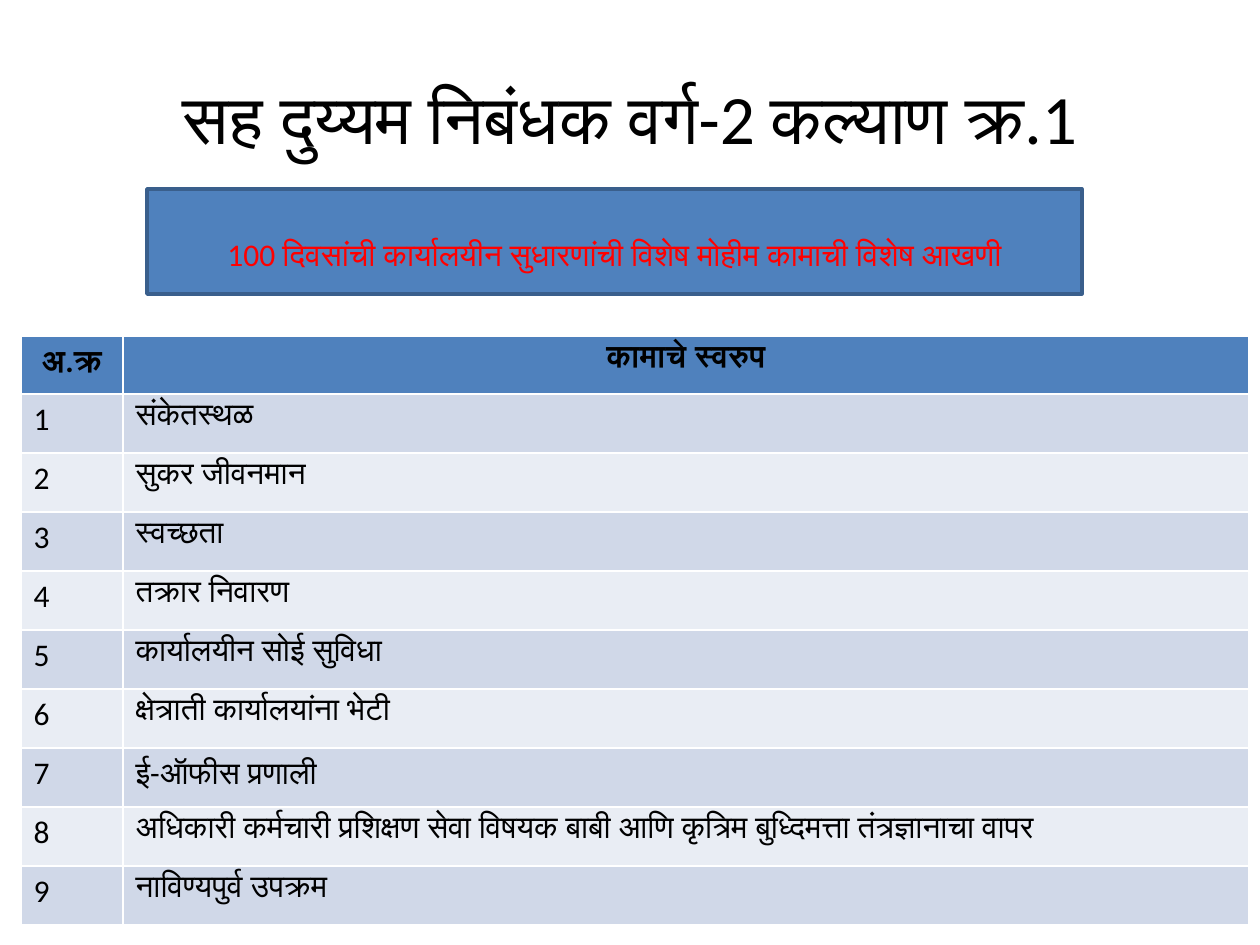
from dataclasses import dataclass

from pptx import Presentation
from pptx.dml.color import RGBColor
from pptx.enum.shapes import MSO_SHAPE as Shape
from pptx.enum.text import MSO_ANCHOR as Anchor, PP_ALIGN as Align
from pptx.util import Emu, Pt

PX = 914400 / 126
FONT = "Calibri"
BLACK, BLUE, RED, OUTLINE = "000000", "4F81BD", "FF0000", "3A5F8C"
BANDS = ("D0D8E8", "E9EDF4")
HEADER_HEIGHT, ROW_HEIGHT = 58, 59
COLUMN_WIDTHS = (102, 1126)
HEADINGS = ("अ.क्र", "कामाचे स्वरुप")
WORKS = (
    "संकेतस्थळ",
    "सुकर जीवनमान",
    "स्वच्छता",
    "तक्रार निवारण",
    "कार्यालयीन सोई सुविधा",
    "क्षेत्राती कार्यालयांना भेटी",
    "ई-ऑफीस प्रणाली",
    "अधिकारी कर्मचारी प्रशिक्षण सेवा विषयक बाबी आणि कृत्रिम बुध्दिमत्ता तंत्रज्ञानाचा वापर",
    "नाविण्यपुर्व उपक्रम",
)


@dataclass(frozen=True)
class Box:
    """Position and size in px."""
    left: int
    top: int
    width: int
    height: int

    def emu(self) -> tuple[Emu, ...]:
        """Return the four lengths in EMU."""
        return tuple(map(px, (self.left, self.top, self.width, self.height)))


@dataclass(frozen=True)
class Row:
    """One table row and its look."""
    texts: tuple[str, ...]
    height: int
    fill: str
    bold: bool = False
    align: Align = Align.LEFT


def px(length: int) -> Emu:
    """Turn px into EMU."""
    return Emu(round(length * PX))


def color(value: str) -> RGBColor:
    """Turn a hex string into a colour."""
    return RGBColor.from_string(value)


def write(frame, text: str, *, size: float = 18, fill: str = BLACK,
          bold: bool = False, align: Align = Align.LEFT) -> None:
    """Write one formatted paragraph into a text frame."""
    frame.word_wrap = True
    paragraph = frame.paragraphs[0]
    paragraph.alignment = align
    run = paragraph.add_run()
    run.text = text
    run.font.name = FONT
    run.font.size = Pt(size)
    run.font.bold = bold
    run.font.color.rgb = color(fill)


def draw_title(slide, box: Box, text: str) -> None:
    """Draw the slide title."""
    frame = slide.shapes.add_textbox(*box.emu()).text_frame
    frame.vertical_anchor = Anchor.MIDDLE
    write(frame, text, size=39.6, align=Align.CENTER)


def draw_banner(slide, box: Box, text: str) -> None:
    """Draw the campaign banner with its text set low."""
    shape = slide.shapes.add_shape(Shape.RECTANGLE, *box.emu())
    shape.shadow.inherit = False
    shape.fill.solid()
    shape.fill.fore_color.rgb = color(BLUE)
    shape.line.color.rgb = color(OUTLINE)
    shape.line.width = Pt(2)
    frame = shape.text_frame
    frame.vertical_anchor = Anchor.MIDDLE
    frame.margin_top = px(30)
    write(frame, text, fill=RED, align=Align.CENTER)


def draw_table(slide, left: int, top: int, rows: list[Row]) -> None:
    """Draw the table of works."""
    box = Box(left, top, sum(COLUMN_WIDTHS), sum(row.height for row in rows))
    table = slide.shapes.add_table(len(rows), len(COLUMN_WIDTHS), *box.emu()).table
    for column, width in zip(table.columns, COLUMN_WIDTHS):
        column.width = px(width)
    for table_row, row in zip(table.rows, rows):
        table_row.height = px(row.height)
        for cell, text in zip(table_row.cells, row.texts):
            cell.fill.solid()
            cell.fill.fore_color.rgb = color(row.fill)
            write(cell.text_frame, text, bold=row.bold, align=row.align)


def main() -> None:
    """Build and save the slide."""
    presentation = Presentation()
    presentation.slide_width, presentation.slide_height = px(1260), px(945)
    slide = presentation.slides.add_slide(presentation.slide_layouts[6])
    draw_title(slide, Box(63, 38, 1134, 158), "सह दुय्यम निबंधक वर्ग-2 कल्याण क्र.1")
    rows = [Row(HEADINGS, HEADER_HEIGHT, BLUE, True, Align.CENTER)]
    rows += [Row((str(number), work), ROW_HEIGHT, BANDS[(number - 1) % 2])
             for number, work in enumerate(WORKS, 1)]
    draw_table(slide, 21, 336, rows)
    draw_banner(slide, Box(147, 189, 935, 105),
                "100 दिवसांची कार्यालयीन सुधारणांची विशेष मोहीम कामाची विशेष आखणी")
    presentation.save("out.pptx")


if __name__ == "__main__":
    main()
